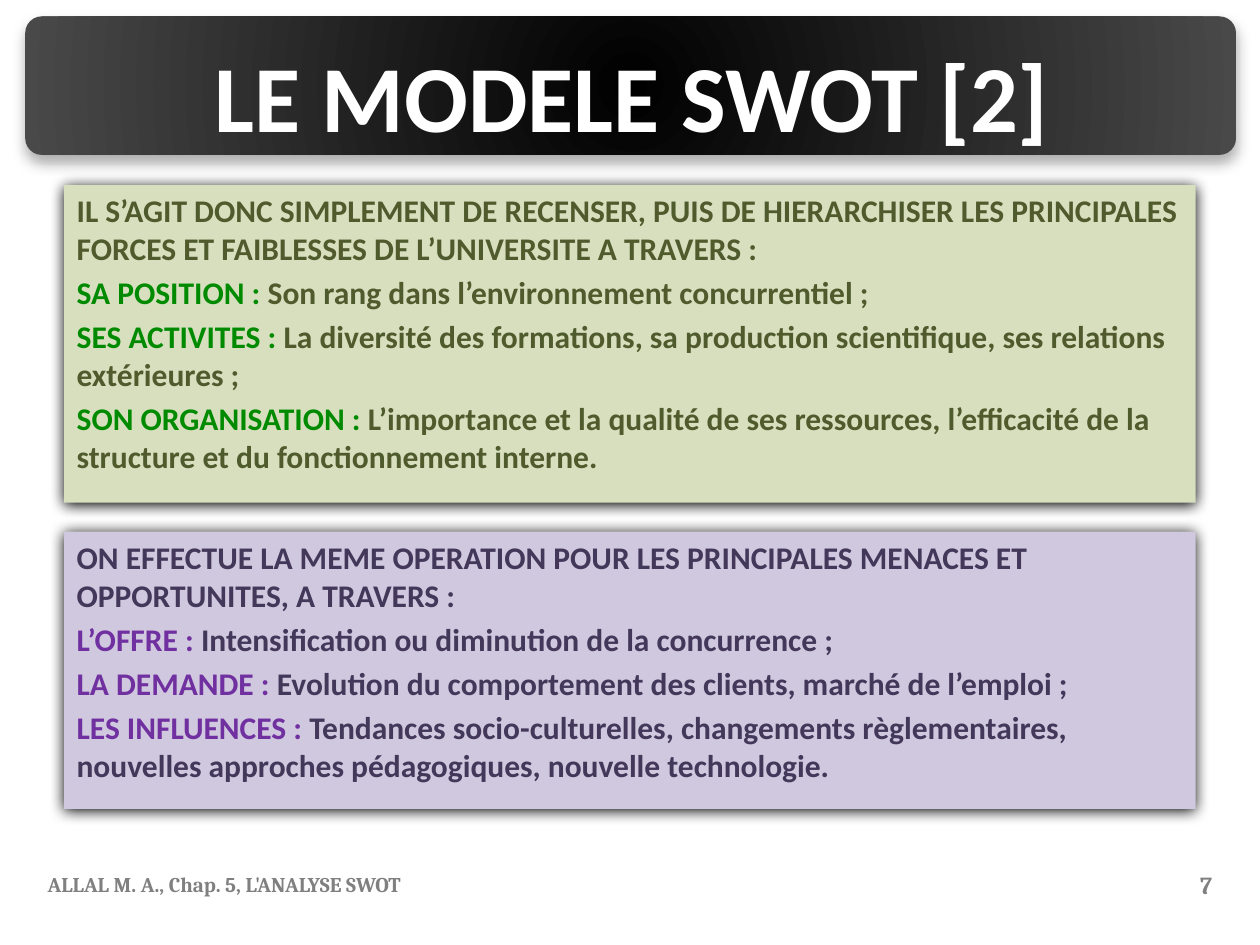
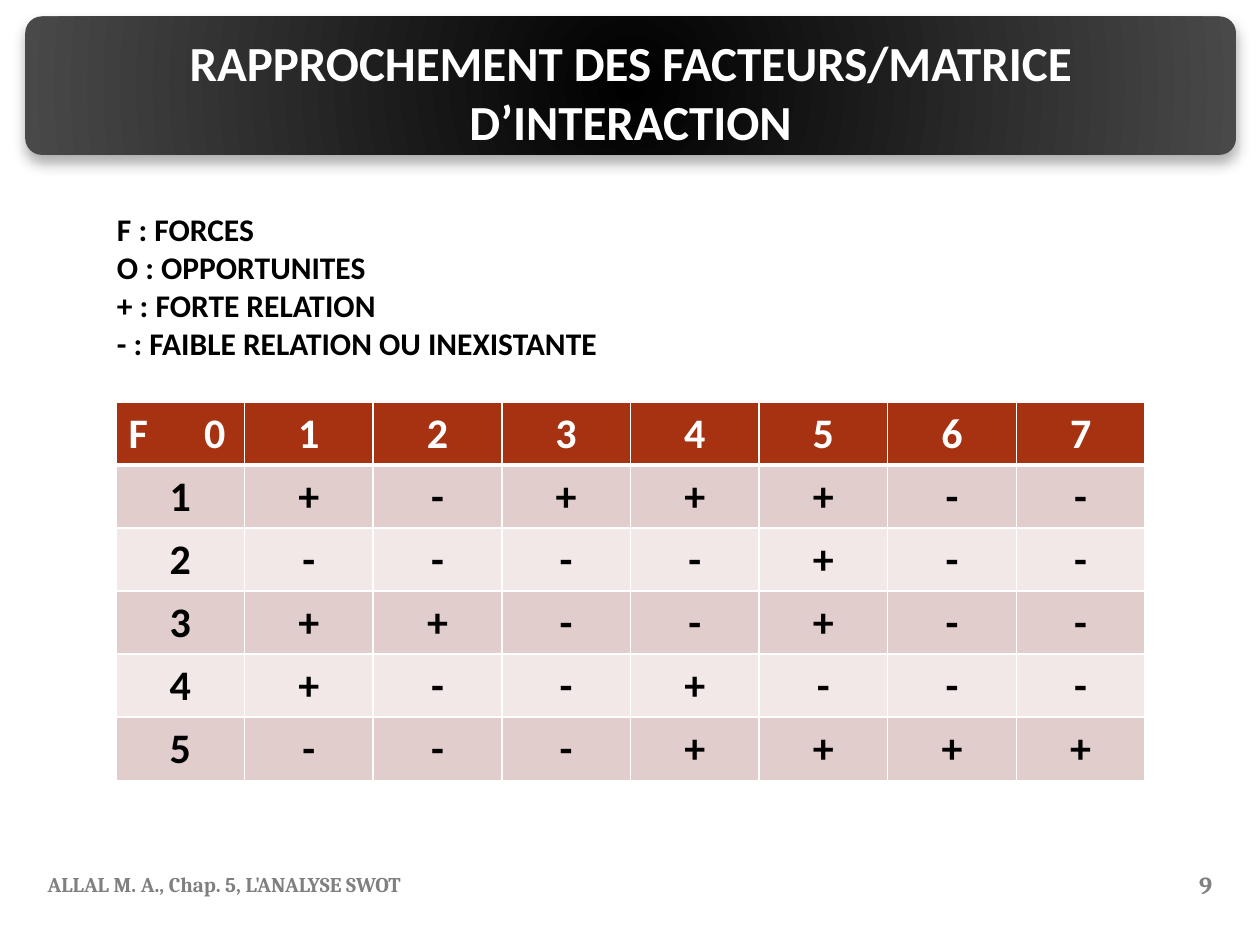
from lxml import etree
from pptx import Presentation
from pptx.dml.color import RGBColor
from pptx.enum.shapes import MSO_SHAPE
from pptx.enum.text import MSO_ANCHOR, PP_ALIGN
from pptx.oxml.ns import qn
from pptx.util import Inches, Pt

RECT, ROUND = MSO_SHAPE.RECTANGLE, MSO_SHAPE.ROUNDED_RECTANGLE
TOP, MIDDLE = MSO_ANCHOR.TOP, MSO_ANCHOR.MIDDLE
LEFT, CENTER, RIGHT = PP_ALIGN.LEFT, PP_ALIGN.CENTER, PP_ALIGN.RIGHT

WHITE, BLACK, GREY = "FFFFFF", "000000", "808080"
BAND = (BLACK, "494949")
HEAD, ROWS = "A63212", ("E1CECC", "F1E8E7")
GREEN = {"fill": "D7DFBF", "key": "008A00", "ink": "4F5B2C"}
PURPLE = {"fill": "D0C8DE", "key": "7030A0", "ink": "43375A"}

TITLE = {"name": "Calibri", "size": Pt(54), "bold": True}
SMALL = {**TITLE, "size": Pt(28)}
BODY = {**TITLE, "size": Pt(18)}
CELL = {**TITLE, "size": Pt(24)}
FOOT = {"name": "Cambria", "size": Pt(12), "bold": True}
PAGE = {**FOOT, "size": Pt(14)}

FOOTER = "ALLAL M. A., Chap. 5, L'ANALYSE SWOT"
FORCES = [
    ("", "IL S’AGIT DONC SIMPLEMENT DE RECENSER, PUIS DE HIERARCHISER LES "
         "PRINCIPALES FORCES ET FAIBLESSES DE L’UNIVERSITE A TRAVERS :"),
    ("SA POSITION : ", "Son rang dans l’environnement concurrentiel ;"),
    ("SES ACTIVITES : ", "La diversité des formations, sa production "
                         "scientifique, ses relations extérieures ;"),
    ("SON ORGANISATION : ", "L’importance et la qualité de ses ressources, "
                            "l’efficacité de la structure et du "
                            "fonctionnement interne."),
]
MENACES = [
    ("", "ON EFFECTUE LA MEME OPERATION POUR LES PRINCIPALES MENACES ET "
         "OPPORTUNITES, A TRAVERS :"),
    ("L’OFFRE : ", "Intensification ou diminution de la concurrence ;"),
    ("LA DEMANDE : ", "Evolution du comportement des clients, marché de "
                      "l’emploi ;"),
    ("LES INFLUENCES : ", "Tendances socio-culturelles, changements "
                          "règlementaires, nouvelles approches pédagogiques, "
                          "nouvelle technologie."),
]
LEGEND = ["F : FORCES", "O : OPPORTUNITES", "+ : FORTE RELATION",
          "- : FAIBLE RELATION OU INEXISTANTE"]
MATRIX = ["+-+++--", "----+--", "++--+--", "+--+---", "---++++"]


def tint(code):
    """Return the colour for a hex string."""
    return RGBColor.from_string(code)


def place(box):
    """Return a box of inches as lengths."""
    return [Inches(side) for side in box]


def node(parent, tag, **attrs):
    """Add an XML child with the given attributes."""
    child = etree.SubElement(parent, qn(tag))
    for key, value in attrs.items():
        child.set(key, str(value))
    return child


def write(para, text, style, ink):
    """Add a styled run to a paragraph."""
    run = para.add_run()
    run.text = text
    for key, value in style.items():
        setattr(run.font, key, value)
    run.font.color.rgb = tint(ink)


def label(slide, box, lines, style, ink, align=LEFT, anchor=TOP):
    """Add a text box with one paragraph per line."""
    frame = slide.shapes.add_textbox(*place(box)).text_frame
    frame.word_wrap = True
    frame.vertical_anchor = anchor
    for i, line in enumerate(lines):
        para = frame.add_paragraph() if i else frame.paragraphs[0]
        para.alignment = align
        write(para, line, style, ink)


def block(slide, kind, box, alpha, blur, dist):
    """Add a shape without outline and with a shadow below it."""
    shape = slide.shapes.add_shape(kind, *place(box))
    shape.line.fill.background()
    shape.shadow.inherit = False
    effect = shape._element.spPr.find(qn("a:effectLst"))
    shade = node(effect, "a:outerShdw", blurRad=Pt(blur), dist=Pt(dist),
                 dir=90 * 60000, algn="ctr", rotWithShape=0)
    color = node(shade, "a:srgbClr", val=BLACK)
    node(color, "a:alpha", val=alpha * 1000)
    return shape


def band(slide, box):
    """Draw the dark rounded band behind the title."""
    shape = block(slide, ROUND, box, 32, 8, 4)
    shape.adjustments[0] = 0.12
    shape.fill.gradient()
    for stop, code in zip(shape.fill.gradient_stops, BAND):
        stop.color.rgb = tint(code)
    grad = shape._element.spPr.find(qn("a:gradFill"))
    grad.remove(grad.find(qn("a:lin")))
    way = node(grad, "a:path", path="circle")
    node(way, "a:fillToRect", l=40000, t=100000, r=40000, b=100000)


def frame(deck, title, box, style, page):
    """Add a slide with its band, title and footer."""
    slide = deck.slides.add_slide(deck.slide_layouts[6])
    band(slide, (0.2, 0.13, 9.61, 1.1))
    label(slide, box, [title], style, WHITE, CENTER)
    label(slide, (0.28, 6.82, 6.85, 0.39), [FOOTER], FOOT, GREY, LEFT, MIDDLE)
    label(slide, (9.12, 6.82, 0.6, 0.4), [page], PAGE, GREY, RIGHT, MIDDLE)
    return slide


def panel(slide, box, items, hues):
    """Draw a tinted panel of key and text pairs."""
    shape = block(slide, RECT, box, 100, 8.5, 1)
    shape.fill.solid()
    shape.fill.fore_color.rgb = tint(hues["fill"])
    body = shape.text_frame
    body.word_wrap = True
    body.vertical_anchor = TOP
    for i, (key, text) in enumerate(items):
        para = body.add_paragraph() if i else body.paragraphs[0]
        para.alignment = LEFT
        if i:
            para.space_before = Pt(3.6)
        if key:
            write(para, key, BODY, hues["key"])
        write(para, text, BODY, hues["ink"])


def border(cell, row):
    """Draw white cell borders, thick under the header."""
    thick = {"T": row == 1, "B": row == 0}
    for side in "LRTB":
        line = node(cell._tc.get_or_add_tcPr(), "a:ln" + side,
                    w=Pt(3 if thick.get(side) else 1))
        node(node(line, "a:solidFill"), "a:srgbClr", val=WHITE)


def grid(slide, box):
    """Draw the table of forces against opportunities."""
    data = [["F\t0", *"1234567"]]
    data += [[str(i), *signs] for i, signs in enumerate(MATRIX, 1)]
    table = slide.shapes.add_table(len(data), len(data[0]), *place(box)).table
    for r, line in enumerate(data):
        for c, text in enumerate(line):
            cell = table.cell(r, c)
            border(cell, r)
            cell.fill.solid()
            cell.fill.fore_color.rgb = tint(ROWS[(r - 1) % 2] if r else HEAD)
            para = cell.text_frame.paragraphs[0]
            para.alignment = CENTER if r or c else LEFT
            if "\t" in text:
                tabs = node(para._p.get_or_add_pPr(), "a:tabLst")
                node(tabs, "a:tab", pos=Inches(0.6), algn="l")
            write(para, text, CELL, BLACK if r else WHITE)


def model(deck):
    """Build the slide on the two groups of factors."""
    slide = frame(deck, "LE MODELE SWOT [2]", (0.17, 0.25, 9.69, 1.01),
                  TITLE, "7")
    panel(slide, (0.51, 1.47, 8.98, 2.52), FORCES, GREEN)
    panel(slide, (0.51, 4.22, 8.98, 2.2), MENACES, PURPLE)


def matrix(deck):
    """Build the slide with the legend and the matrix."""
    slide = frame(deck, "RAPPROCHEMENT DES FACTEURS/MATRICE D’INTERACTION",
                  (0.83, 0.21, 8.35, 1.04), SMALL, "9")
    label(slide, (0.83, 1.62, 8.35, 1.31), LEGEND, BODY, BLACK)
    grid(slide, (0.92, 3.19, 8.17, 3))


def main():
    """Build and save the deck."""
    deck = Presentation()
    deck.slide_width, deck.slide_height = Inches(10), Inches(7.5)
    model(deck)
    matrix(deck)
    deck.save("out.pptx")


if __name__ == "__main__":
    main()
